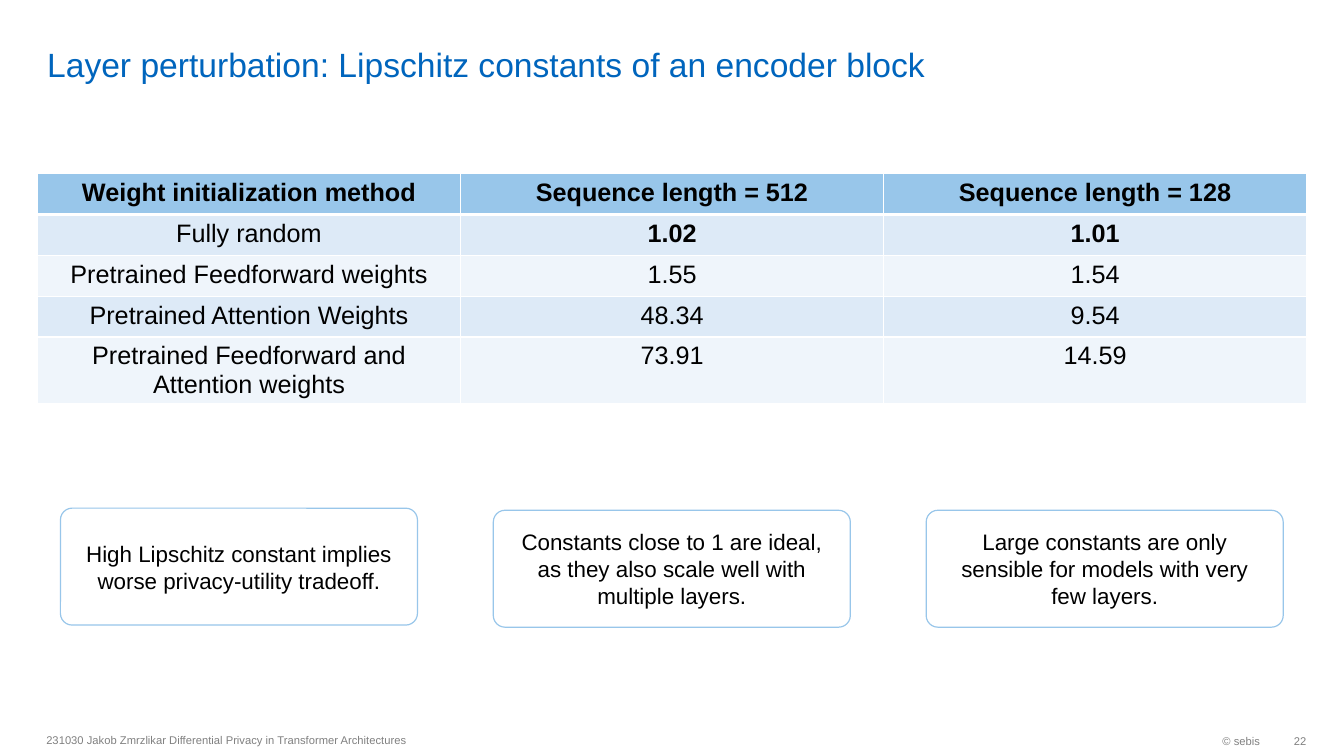
from lxml import etree
from pptx import Presentation
from pptx.dml.color import RGBColor
from pptx.enum.shapes import MSO_SHAPE
from pptx.enum.text import MSO_ANCHOR, MSO_AUTO_SIZE, PP_ALIGN
from pptx.oxml.ns import qn
from pptx.util import Pt

LEFT, CENTER, RIGHT = PP_ALIGN.LEFT, PP_ALIGN.CENTER, PP_ALIGN.RIGHT
MIDDLE, BOTTOM = MSO_ANCHOR.MIDDLE, MSO_ANCHOR.BOTTOM
ROUND = MSO_SHAPE.ROUNDED_RECTANGLE
NO_FIT = MSO_AUTO_SIZE.NONE

BLACK = RGBColor(0x00, 0x00, 0x00)
WHITE = RGBColor(0xFF, 0xFF, 0xFF)
BLUE = RGBColor(0x00, 0x65, 0xBD)
SKY = RGBColor(0x98, 0xC6, 0xEA)
PALE = RGBColor(0xDD, 0xEA, 0xF7)
MIST = RGBColor(0xEF, 0xF5, 0xFB)
GRAY = RGBColor(0x80, 0x80, 0x80)

ROWS = [
    ("Weight initialization method", "Sequence length = 512", "Sequence length = 128"),
    ("Fully random", "1.02", "1.01"),
    ("Pretrained Feedforward weights", "1.55", "1.54"),
    ("Pretrained Attention Weights", "48.34", "9.54"),
    ("Pretrained Feedforward and Attention weights", "73.91", "14.59"),
]
HEIGHTS = [29.2] * 4 + [47.2]
BEST = {"1.02", "1.01"}

CARDS = [
    (363, "High Lipschitz constant implies worse privacy-utility tradeoff."),
    (364.5, "Constants close to 1 are ideal, as they also scale well with multiple layers."),
    (364.5, "Large constants are only sensible for models with very few layers."),
]
CARD_LEFT, CARD_STEP = 43.2, 309.2

NOTES = [
    (26, 517, 453.6, 7.2, LEFT,
     "231030 Jakob Zmrzlikar Differential Privacy in Transformer Architectures"),
    (738.7, 517.5, 168.5, 7.2, RIGHT, "© sebis"),
    (907.2, 517.5, 26, 0, RIGHT, "22"),
]


class Page:
    def __init__(self, slide, font="Arial"):
        self.slide = slide
        self.font = font

    def label(self, frame, text, size, color, align, bold=False):
        frame.text = text
        frame.word_wrap = True
        para = frame.paragraphs[0]
        para.alignment = align
        font = para.font
        font.name, font.size, font.bold = self.font, Pt(size), bold
        font.color.rgb = color

    def title(self, text, left, top, width, height):
        shape = self.slide.shapes.title
        shape.left, shape.top = Pt(left), Pt(top)
        shape.width, shape.height = Pt(width), Pt(height)
        frame = shape.text_frame
        frame.auto_size = NO_FIT
        frame.vertical_anchor = BOTTOM
        frame.margin_left = frame.margin_right = Pt(7.2)
        frame.margin_top = frame.margin_bottom = 0
        self.label(frame, text, 24, BLUE, LEFT)

    def note(self, left, top, width, pad, align, text):
        box = self.slide.shapes.add_textbox(Pt(left), Pt(top), Pt(width), Pt(23))
        frame = box.text_frame
        frame.vertical_anchor = MIDDLE
        frame.margin_right = Pt(pad)
        self.label(frame, text, 8, GRAY, align)

    def card(self, left, top, text):
        shape = self.slide.shapes.add_shape(ROUND, Pt(left), Pt(top), Pt(255), Pt(83.5))
        shape.adjustments[0] = 0.1
        shape.shadow.inherit = False
        shape.fill.solid()
        shape.fill.fore_color.rgb = WHITE
        shape.line.color.rgb = SKY
        shape.line.width = Pt(0.85)
        frame = shape.text_frame
        frame.vertical_anchor = MIDDLE
        frame.margin_left = frame.margin_right = Pt(10.5)
        self.label(frame, text, 16, BLACK, CENTER)

    def edge(self, cell, top, bottom):
        """Draw white borders; top and bottom are line widths in points."""
        props = cell._tc.get_or_add_tcPr()
        for side, width in (("L", 1), ("R", 1), ("T", top), ("B", bottom)):
            line = etree.SubElement(props, qn(f"a:ln{side}"), w=str(Pt(width)))
            fill = etree.SubElement(line, qn("a:solidFill"))
            etree.SubElement(fill, qn("a:srgbClr"), val=str(WHITE))

    def table(self, left, top, width, rows, heights):
        frame = self.slide.shapes.add_table(
            len(rows), len(rows[0]), Pt(left), Pt(top), Pt(width), Pt(sum(heights)))
        grid = frame.table
        for r, row in enumerate(rows):
            grid.rows[r].height = Pt(heights[r])
            tint = SKY if r == 0 else PALE if r % 2 else MIST
            for c, text in enumerate(row):
                cell = grid.cell(r, c)
                self.edge(cell, 3 if r == 1 else 1, 3 if r == 0 else 1)
                cell.fill.solid()
                cell.fill.fore_color.rgb = tint
                bold = r == 0 or text in BEST
                self.label(cell.text_frame, text, 18, BLACK, CENTER, bold)


def main():
    deck = Presentation()
    deck.slide_width, deck.slide_height = Pt(960), Pt(540)
    page = Page(deck.slides.add_slide(deck.slide_layouts[5]))
    page.title("Layer perturbation: Lipschitz constants of an encoder block",
               26.5, 3.5, 834, 57)
    page.table(26.8, 124, 906.6, ROWS, HEIGHTS)
    for i, (top, text) in enumerate(CARDS):
        page.card(CARD_LEFT + i * CARD_STEP, top, text)
    for note in NOTES:
        page.note(*note)
    deck.save("out.pptx")


if __name__ == "__main__":
    main()
